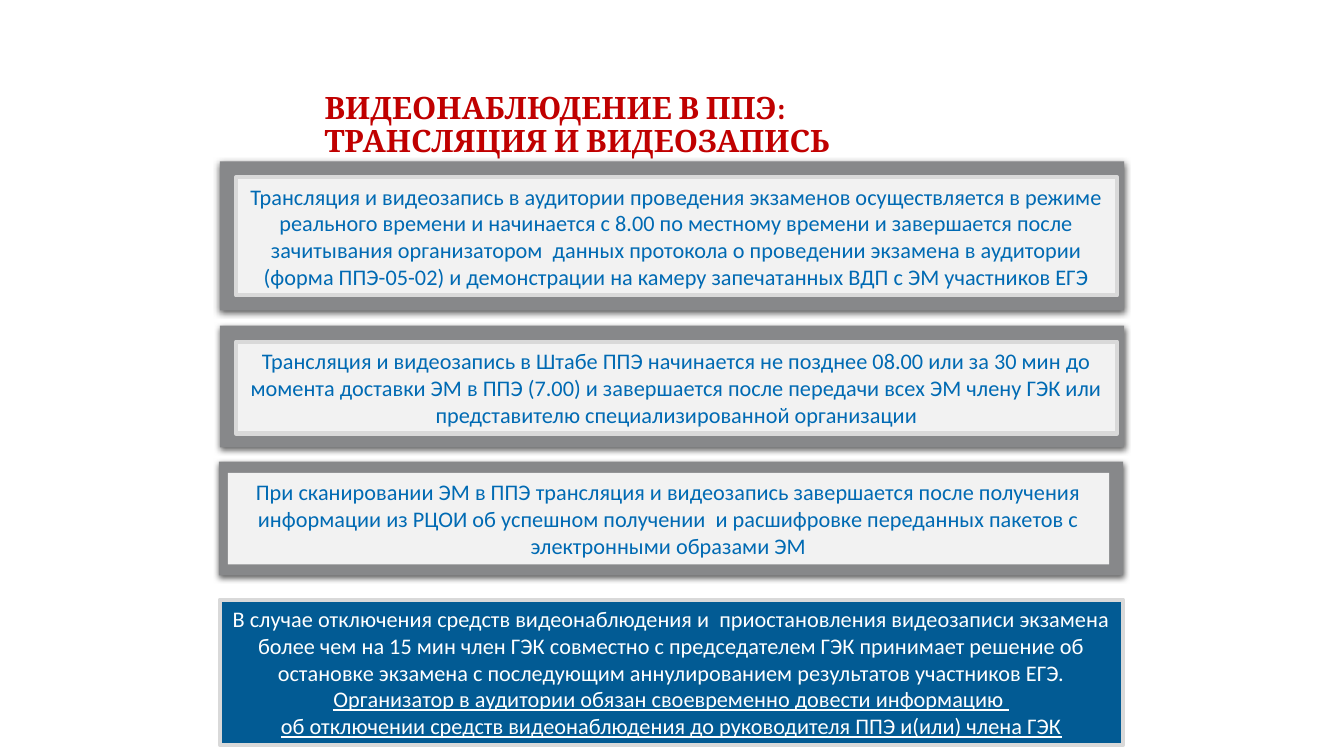
"""Build a slide on video surveillance rules at exam centres."""
from lxml.etree import SubElement
from pptx import Presentation
from pptx.dml.color import RGBColor as RGB
from pptx.enum.shapes import MSO_SHAPE as SHAPE
from pptx.enum.text import MSO_ANCHOR as ANCHOR, PP_ALIGN as ALIGN
from pptx.oxml.ns import qn
from pptx.util import Inches, Pt

RED = RGB(0xC0, 0x00, 0x00)
BLUE = RGB(0x00, 0x6A, 0xB3)
NAVY = RGB(0x02, 0x5B, 0x94)
GRAY = RGB(0x87, 0x88, 0x8A)
PALE = RGB(0xF2, 0xF2, 0xF2)
EDGE = RGB(0xD9, 0xD9, 0xD9)
WHITE = RGB(0xFF, 0xFF, 0xFF)

deck = Presentation()
deck.slide_width, deck.slide_height = Inches(13.33), Inches(7.5)
slide = deck.slides.add_slide(deck.slide_layouts[6])


def add_box(area, fill, edge=None):
    box = slide.shapes.add_shape(SHAPE.RECTANGLE, *map(Inches, area))
    box.shadow.inherit = False
    box.fill.solid()
    box.fill.fore_color.rgb = fill
    if edge is None:
        box.line.fill.background()
    else:
        box.line.color.rgb = edge
        box.line.width = Pt(3)
    box.text_frame.word_wrap = True
    box.text_frame.vertical_anchor = ANCHOR.MIDDLE
    return box


def add_run(para, text, color, size=15.9, face="Calibri"):
    run = para.add_run()
    run.text = text
    run.font.name = face
    run.font.size = Pt(size)
    run.font.color.rgb = color
    return run


title = slide.shapes.add_textbox(Inches(3.12), Inches(0.78), Inches(8.35), Inches(0.94))
title.text_frame.word_wrap = True
title.text_frame.vertical_anchor = ANCHOR.MIDDLE
para = title.text_frame.paragraphs[0]
para.line_spacing = 0.9
add_run(para, "ВИДЕОНАБЛЮДЕНИЕ В ППЭ:", RED, 22, "Cambria").font.bold = True
para.add_line_break()
add_run(para, "ТРАНСЛЯЦИЯ И ВИДЕОЗАПИСЬ", RED, 22, "Cambria").font.bold = True

panels = [
    ((2.18, 1.6, 8.97, 1.48), (2.34, 1.76, 8.74, 1.17), EDGE,
     "Трансляция и видеозапись в аудитории проведения экзаменов осуществляется "
     "в режиме реального времени и начинается с 8.00 по местному времени "
     "и завершается после зачитывания организатором  данных протокола о проведении "
     "экзамена в аудитории (форма ППЭ-05-02) и демонстрации на камеру запечатанных "
     "ВДП с ЭМ участников ЕГЭ"),
    ((2.18, 3.23, 8.97, 1.21), (2.34, 3.39, 8.74, 0.91), EDGE,
     "Трансляция и видеозапись в Штабе ППЭ начинается не позднее 08.00 или за "
     "30 мин до момента доставки ЭМ в ППЭ (7.00) и завершается после передачи "
     "всех ЭМ члену ГЭК или представителю специализированной организации"),
    ((2.17, 4.58, 8.97, 1.13), (2.26, 4.69, 8.74, 0.91), None,
     "При сканировании ЭМ в ППЭ трансляция и видеозапись завершается после "
     "получения информации из РЦОИ об успешном получении  и расшифровке "
     "переданных пакетов с электронными образами ЭМ"),
]
for outer, inner, edge, text in panels:
    frame = add_box(outer, GRAY)
    effect = frame._element.spPr.find(qn("a:effectLst"))
    shade = SubElement(effect, qn("a:outerShdw"), blurRad=str(Pt(4.5)),
                       dist=str(Pt(1.5)), dir="5400000", rotWithShape="0")
    tone = SubElement(shade, qn("a:srgbClr"), val="000000")
    SubElement(tone, qn("a:alpha"), val="63000")
    para = add_box(inner, PALE, edge).text_frame.paragraphs[0]
    para.alignment = ALIGN.CENTER
    add_run(para, text, BLUE)

para = add_box((2.18, 5.95, 8.96, 1.44), NAVY, EDGE).text_frame.paragraphs[0]
para.alignment = ALIGN.CENTER
add_run(para, "В случае отключения средств видеонаблюдения и  приостановления "
        "видеозаписи экзамена более чем на 15 мин член ГЭК совместно с председателем "
        "ГЭК принимает решение об остановке экзамена с последующим аннулированием "
        "результатов участников ЕГЭ. ", WHITE)
add_run(para, "Организатор в аудитории обязан своевременно довести информацию ",
        WHITE).font.underline = True
para.add_line_break()
add_run(para, "об отключении средств видеонаблюдения до руководителя ППЭ и(или) члена ГЭК",
        WHITE).font.underline = True

deck.save("out.pptx")
